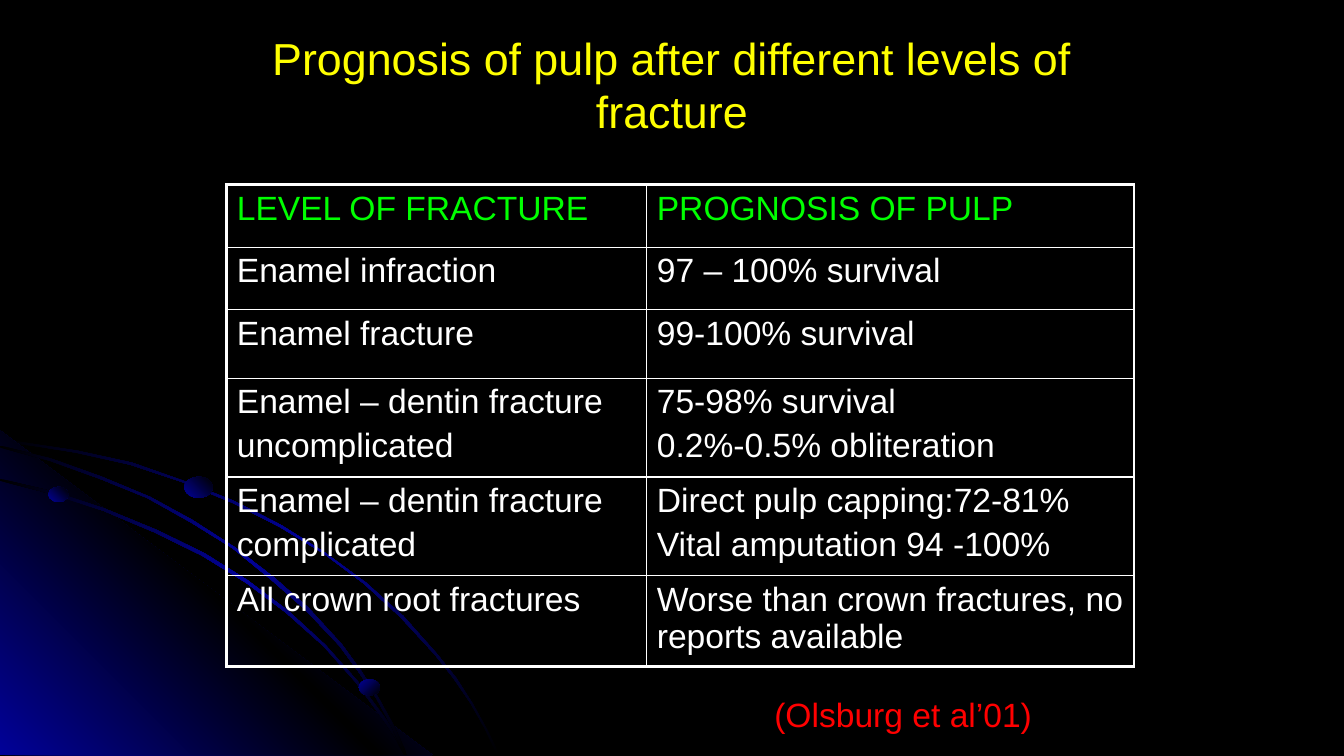
import lxml.etree
import pptx
import pptx.dml.color
import pptx.enum.shapes
import pptx.enum.text
import pptx.oxml.ns
import pptx.util

Pt = pptx.util.Pt
qn = pptx.oxml.ns.qn
FONT = "Arial"
BLACK, BLUE, WHITE = "000000", "010199", "FFFFFF"
YELLOW, GREEN, RED = "FFFF00", "00FF00", "FF0000"
UNIT = 0.72

OUTER_BAND = [
    (76, 20), (37, 14), (0, 8), (0, 11), (37, 16), (75, 22), (129, 34),
    (180, 51), (231, 72), (278, 96), (321, 122), (361, 152), (397, 185),
    (431, 222), (450, 246), (467, 271), (481, 296), (493, 322), (496, 322),
    (483, 296), (469, 271), (453, 246), (433, 221), (400, 184), (363, 151),
    (322, 121), (279, 94), (232, 70), (182, 50), (131, 32),
]
GLOW = [(429, 322), (0, 322), (0, 0)]
INNER_BAND = [
    (380, 287), (392, 305), (401, 322), (404, 322), (394, 303), (382, 285),
    (355, 249), (323, 213), (286, 179), (246, 149), (203, 122), (156, 99),
    (105, 78), (54, 61), (0, 48), (0, 50), (51, 63), (103, 80), (153, 101),
    (200, 124), (244, 151), (284, 181), (321, 214), (353, 250),
]
MIDDLE_BAND = [
    (0, 15), (0, 17), (49, 30), (99, 48), (146, 67), (189, 91), (231, 117),
    (269, 148), (303, 178), (337, 214), (356, 240), (374, 267), (389, 295),
    (401, 322), (404, 322), (391, 293), (376, 266), (358, 238), (339, 212),
    (306, 176), (272, 146), (233, 116), (191, 89), (149, 66), (101, 46),
    (51, 28),
]
OUTLINES = [
    (OUTER_BAND, [BLACK, BLUE, BLACK], 315),
    (GLOW, [BLUE, BLACK, BLUE], 45),
    (INNER_BAND, [BLACK, BLUE, BLACK], 315),
    (MIDDLE_BAND, [BLACK, BLUE, BLACK], 315),
]
DOTS = [
    (48, 56, 20, 15, 45),
    (356, 247, 21, 16, 315),
    (183, 46, 28, 21, 45),
]
ROWS = [
    (44.64, ["LEVEL OF FRACTURE"], ["PROGNOSIS OF PULP"]),
    (44.64, ["Enamel infraction"], ["97 – 100% survival"]),
    (48.96, ["Enamel fracture"], ["99-100% survival"]),
    (70.56, ["Enamel – dentin fracture", "uncomplicated"],
     ["75-98% survival", "0.2%-0.5% obliteration"]),
    (70.56, ["Enamel – dentin fracture", "complicated"],
     ["Direct pulp capping:72-81%", "Vital amputation 94 -100%"]),
    (64.8, ["All crown root fractures"],
     ["Worse than crown fractures, no reports available"]),
]


def rgb(value):
    return pptx.dml.color.RGBColor.from_string(value)


def add_run(p, text, size, color):
    r = p.add_run()
    r.text = text
    r.font.name = FONT
    r.font.size = Pt(size)
    r.font.color.rgb = rgb(color)


def shade(sp, colors, angle):
    sp.shadow.inherit = False
    sp.line.fill.background()
    sp.fill.gradient()
    sp.fill.gradient_angle = angle
    stops = sp._element.spPr.find(".//" + qn("a:gsLst"))
    for stop in list(stops):
        stops.remove(stop)
    for i, color in enumerate(colors):
        pos = str(100000 * i // (len(colors) - 1))
        stop = lxml.etree.SubElement(stops, qn("a:gs"), pos=pos)
        lxml.etree.SubElement(stop, qn("a:srgbClr"), val=color)


def add_orbits(s, left, top):
    for points, colors, angle in OUTLINES:
        builder = s.shapes.build_freeform(*points[0], scale=Pt(UNIT))
        builder.add_line_segments(points[1:], close=True)
        shade(builder.convert_to_shape(Pt(left), Pt(top)), colors, angle)
    for x, y, width, height, angle in DOTS:
        sp = s.shapes.add_shape(
            pptx.enum.shapes.MSO_SHAPE.OVAL,
            Pt(left + x * UNIT), Pt(top + y * UNIT),
            Pt(width * UNIT), Pt(height * UNIT))
        shade(sp, [BLUE, BLACK], angle)


def add_title(s, left, top, width, height):
    sp = s.shapes.title
    sp.left, sp.top, sp.width, sp.height = map(Pt, (left, top, width, height))
    tf = sp.text_frame
    tf.word_wrap = True
    tf.vertical_anchor = pptx.enum.text.MSO_ANCHOR.MIDDLE
    p = tf.paragraphs[0]
    p.alignment = pptx.enum.text.PP_ALIGN.CENTER
    add_run(p, "Prognosis of pulp after different levels of fracture", 32, YELLOW)


def add_borders(cell, widths):
    tc_pr = cell._tc.get_or_add_tcPr()
    for side, width in widths.items():
        line = lxml.etree.SubElement(tc_pr, qn("a:ln" + side), w=str(Pt(width)))
        fill = lxml.etree.SubElement(line, qn("a:solidFill"))
        lxml.etree.SubElement(fill, qn("a:srgbClr"), val=WHITE)


def add_prognosis_table(s, left, top, widths):
    height = sum(row[0] for row in ROWS)
    table = s.shapes.add_table(
        len(ROWS), len(widths), Pt(left), Pt(top), Pt(sum(widths)), Pt(height)).table
    table.first_row = table.horz_banding = False
    for column, width in zip(table.columns, widths):
        column.width = Pt(width)
    for i, (row_height, *texts) in enumerate(ROWS):
        table.rows[i].height = Pt(row_height)
        for j, lines in enumerate(texts):
            cell = table.cell(i, j)
            cell.margin_left = cell.margin_right = Pt(7.2)
            cell.margin_top = cell.margin_bottom = Pt(3.6)
            edges = {"L": j == 0, "R": j == len(widths) - 1,
                     "T": i == 0, "B": i == len(ROWS) - 1}
            add_borders(cell, {k: 2.25 if outer else 1 for k, outer in edges.items()})
            cell.fill.background()
            tf = cell.text_frame
            for k, line in enumerate(lines):
                p = tf.add_paragraph() if k else tf.paragraphs[0]
                if k:
                    p.space_before = Pt(4.8)
                add_run(p, line, 24, WHITE if i else GREEN)


def add_citation(s, left, top, width, height):
    sp = s.shapes.add_textbox(Pt(left), Pt(top), Pt(width), Pt(height))
    tf = sp.text_frame
    tf.word_wrap = True
    tf.auto_size = pptx.enum.text.MSO_AUTO_SIZE.SHAPE_TO_FIT_TEXT
    add_run(tf.paragraphs[0], "(Olsburg et al’01)", 24, RED)


def main():
    prs = pptx.Presentation()
    prs.slide_width, prs.slide_height = Pt(960), Pt(540)
    s = prs.slides.add_slide(prs.slide_layouts[5])
    s.background.fill.solid()
    s.background.fill.fore_color.rgb = rgb(BLACK)
    add_orbits(s, 0, 307.44)
    add_title(s, 156, 18, 648, 84)
    add_prognosis_table(s, 162, 132, [300, 348])
    add_citation(s, 546, 492, 204, 36)
    prs.save("out.pptx")


if __name__ == "__main__":
    main()
